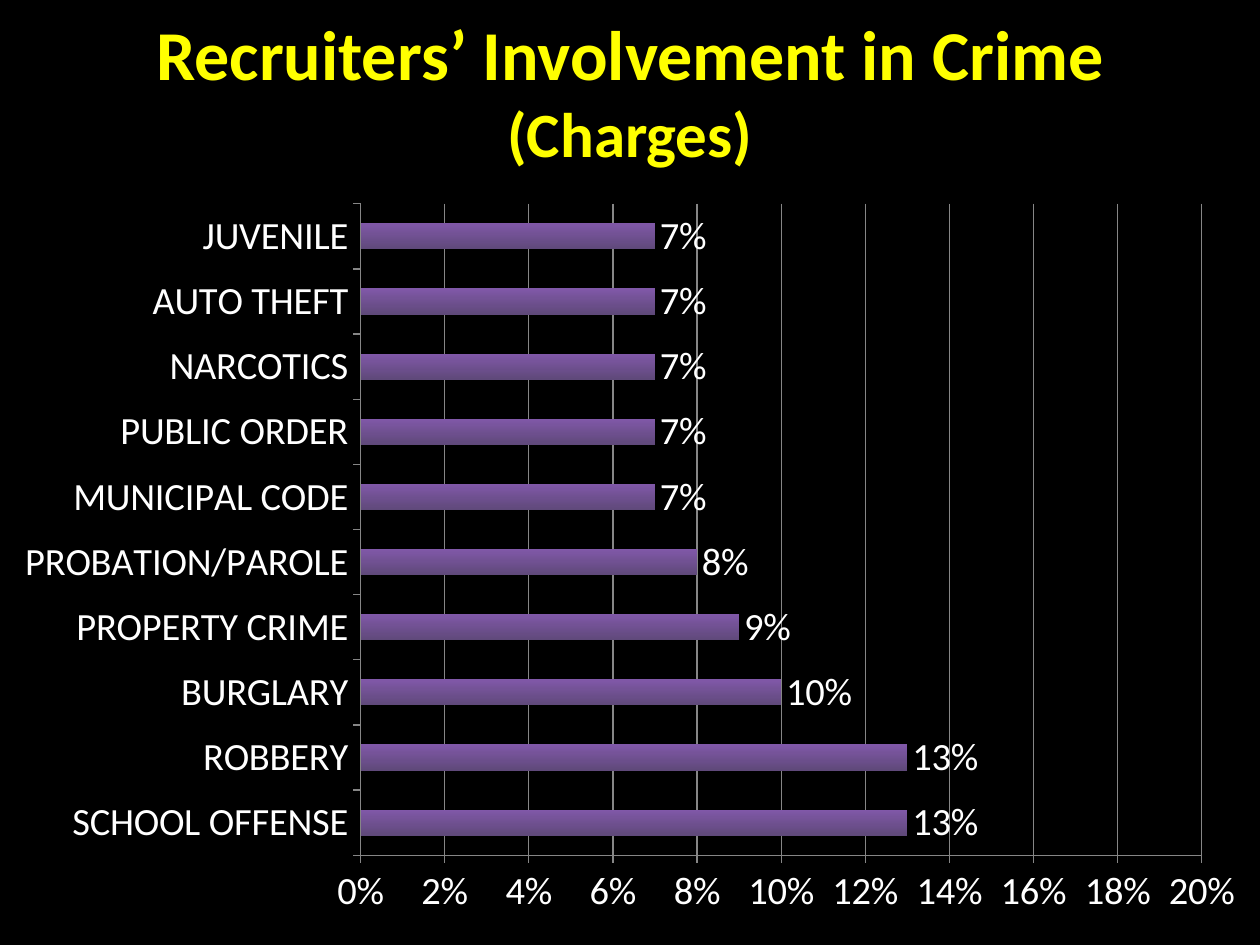
from pptx import Presentation
from pptx.chart.data import CategoryChartData
from pptx.dml.color import RGBColor
from pptx.enum.chart import XL_CHART_TYPE, XL_LABEL_POSITION, XL_TICK_MARK
from pptx.enum.text import MSO_ANCHOR, PP_ALIGN
from pptx.util import Inches, Pt


def rgb(color):
    return RGBColor.from_string(color)


prs = Presentation()
prs.slide_width, prs.slide_height = Inches(10), Inches(7.5)
s = prs.slides.add_slide(prs.slide_layouts[5])
s.background.fill.solid()
s.background.fill.fore_color.rgb = rgb("000000")

# Title
title = s.shapes.title
title.left, title.top = Inches(0.5), Inches(0.09)
title.width, title.height = Inches(9), Inches(1.25)
tf = title.text_frame
tf.word_wrap = True
tf.vertical_anchor = MSO_ANCHOR.MIDDLE
p = tf.paragraphs[0]
p.alignment = PP_ALIGN.CENTER
p.font.name = "Calibri"
p.font.bold = True
p.font.color.rgb = rgb("FFFF00")
r = p.add_run()
r.text = "Recruiters’ Involvement in Crime"
r.font.size = Pt(40)
p.add_line_break()
r = p.add_run()
r.text = "(Charges)"
r.font.size = Pt(36)

# Charges, from the bottom bar up
charges = {
    "SCHOOL OFFENSE": 0.13,
    "ROBBERY": 0.13,
    "BURGLARY": 0.10,
    "PROPERTY CRIME": 0.09,
    "PROBATION/PAROLE": 0.08,
    "MUNICIPAL CODE": 0.07,
    "PUBLIC ORDER": 0.07,
    "NARCOTICS": 0.07,
    "AUTO THEFT": 0.07,
    "JUVENILE": 0.07,
}
data = CategoryChartData(number_format="0%")
data.categories = list(charges)
data.add_series("Series 1", list(charges.values()))
chart = s.shapes.add_chart(XL_CHART_TYPE.BAR_CLUSTERED, Inches(0), Inches(1.5),
                           Inches(10), Inches(5.88), data).chart
chart.has_legend = False
chart.has_title = False
chart.font.name = "Calibri"
chart.font.size = Pt(22)
chart.font.color.rgb = rgb("FFFFFF")

# Axes
for axis in (chart.category_axis, chart.value_axis):
    axis.major_tick_mark = XL_TICK_MARK.OUTSIDE
    axis.minor_tick_mark = XL_TICK_MARK.NONE
    axis.format.line.color.rgb = rgb("868686")
    axis.format.line.width = Pt(0.75)
axis = chart.value_axis
axis.minimum_scale, axis.maximum_scale, axis.major_unit = 0, 0.2, 0.02
axis.tick_labels.number_format = "0%"
axis.tick_labels.number_format_is_linked = False
axis.has_major_gridlines = True
axis.major_gridlines.format.line.color.rgb = rgb("868686")
axis.major_gridlines.format.line.width = Pt(0.75)

# Bars, shaded from top to bottom
plot = chart.plots[0]
plot.gap_width = 150
plot.vary_by_categories = False
fill = plot.series[0].format.fill
fill.gradient()
fill.gradient_angle = 270
for stop, color in zip(fill.gradient_stops, ("8058A8", "5F497A")):
    stop.color.rgb = rgb(color)

# Value labels
plot.has_data_labels = True
labels = plot.data_labels
labels.show_value = True
labels.number_format = "0%"
labels.number_format_is_linked = False
labels.position = XL_LABEL_POSITION.OUTSIDE_END

prs.save("out.pptx")
